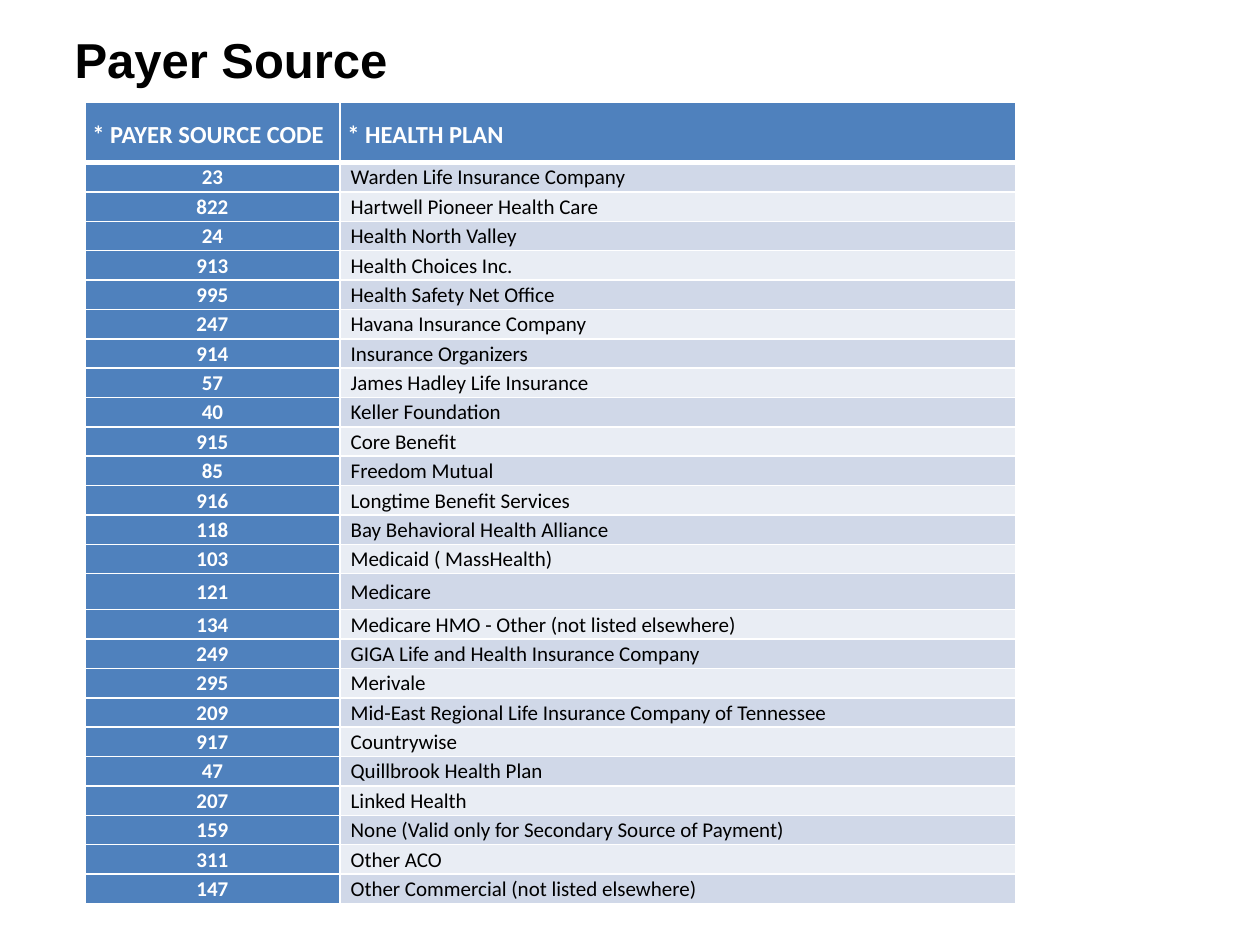
from lxml.etree import SubElement
from pptx import Presentation
from pptx.dml.color import RGBColor
from pptx.enum.text import MSO_ANCHOR, PP_ALIGN
from pptx.oxml.ns import qn
from pptx.util import Pt

COLORS = {
    "header": "4F81BD",
    "odd": "D0D8E8",
    "even": "E9EDF4",
    "white": "FFFFFF",
    "black": "000000",
}

HEADERS = ["* PAYER SOURCE CODE", "* HEALTH PLAN"]

PAYERS = [
    ("23", "Warden Life Insurance Company"),
    ("822", "Hartwell Pioneer Health Care"),
    ("24", "Health North Valley"),
    ("913", "Health Choices Inc."),
    ("995", "Health Safety Net Office"),
    ("247", "Havana Insurance Company"),
    ("914", "Insurance Organizers"),
    ("57", "James Hadley Life Insurance"),
    ("40", "Keller Foundation"),
    ("915", "Core Benefit"),
    ("85", "Freedom Mutual"),
    ("916", "Longtime Benefit Services"),
    ("118", "Bay Behavioral Health Alliance"),
    ("103", "Medicaid ( MassHealth)"),
    ("121", "Medicare"),
    ("134", "Medicare HMO - Other (not listed elsewhere)"),
    ("249", "GIGA Life and Health Insurance Company"),
    ("295", "Merivale"),
    ("209", "Mid-East Regional Life Insurance Company of Tennessee"),
    ("917", "Countrywise"),
    ("47", "Quillbrook Health Plan"),
    ("207", "Linked Health"),
    ("159", "None (Valid only for Secondary Source of Payment)"),
    ("311", "Other ACO"),
    ("147", "Other Commercial (not listed elsewhere)"),
]


class Deck:
    title_font = "Arial"
    body_font = "Calibri"

    def __init__(self, prs):
        self.s = prs.slides.add_slide(prs.slide_layouts[6])

    def color(self, name):
        return RGBColor.from_string(COLORS[name])

    def run(self, p, text, font, size, color, bold):
        r = p.add_run()
        r.text = text
        r.font.name = font
        r.font.size = Pt(size)
        r.font.bold = bold
        r.font.color.rgb = self.color(color)

    def title(self, text, left, top, width, height):
        sp = self.s.shapes.add_textbox(Pt(left), Pt(top), Pt(width), Pt(height))
        tf = sp.text_frame
        tf.word_wrap = True
        tf.vertical_anchor = MSO_ANCHOR.MIDDLE
        self.run(tf.paragraphs[0], text, self.title_font, 28, "black", True)

    def table(self, left, top, widths, heights):
        frame = self.s.shapes.add_table(
            len(heights), len(widths), Pt(left), Pt(top),
            Pt(sum(widths)), Pt(sum(heights)))
        tbl = frame.table
        for column, width in zip(tbl.columns, widths):
            column.width = Pt(width)
        for row, height in zip(tbl.rows, heights):
            row.height = Pt(height)
        return tbl

    def borders(self, cell, top, bottom):
        tc_pr = cell.fill._xPr
        sides = [("a:lnL", 1), ("a:lnR", 1), ("a:lnT", top), ("a:lnB", bottom)]
        for i, (tag, width) in enumerate(sides):
            ln = SubElement(tc_pr, qn(tag), w=str(Pt(width)))
            fill = SubElement(ln, qn("a:solidFill"))
            SubElement(fill, qn("a:srgbClr"), val=COLORS["white"])
            tc_pr.insert(i, ln)

    def cell(self, cell, text, fill, size=12, color="white", bold=True,
             align=PP_ALIGN.LEFT, left=0.7, right=0.7, inset_top=0.7,
             spacing=None, top=1, bottom=1):
        cell.fill.solid()
        cell.fill.fore_color.rgb = self.color(fill)
        cell.vertical_anchor = MSO_ANCHOR.MIDDLE
        cell.margin_left, cell.margin_right = Pt(left), Pt(right)
        cell.margin_top, cell.margin_bottom = Pt(inset_top), Pt(0)
        p = cell.text_frame.paragraphs[0]
        p.alignment = align
        if spacing:
            p.line_spacing = spacing
        self.run(p, text, self.body_font, size, color, bold)
        self.borders(cell, top, bottom)


def main():
    prs = Presentation()
    prs.slide_width, prs.slide_height = Pt(720), Pt(540)
    deck = Deck(prs)
    deck.title("Payer Source", 35.5, 8.5, 633, 50)

    heights = [34.3] + [20.6 if name == "Medicare" else 16.8 for _, name in PAYERS]
    tbl = deck.table(48.5, 58.6, [145.8, 386.4], heights)
    for col, text in enumerate(HEADERS):
        deck.cell(tbl.cell(0, col), text, "header", size=14, left=4.3, right=4.3,
                  inset_top=0, spacing=1.15, bottom=3)
    for row, (code, name) in enumerate(PAYERS, 1):
        top = 3 if row == 1 else 1
        deck.cell(tbl.cell(row, 0), code, "header", align=PP_ALIGN.CENTER, top=top)
        deck.cell(tbl.cell(row, 1), name, "odd" if row % 2 else "even",
                  color="black", bold=False, left=6.1, top=top)
    prs.save("out.pptx")


if __name__ == "__main__":
    main()
